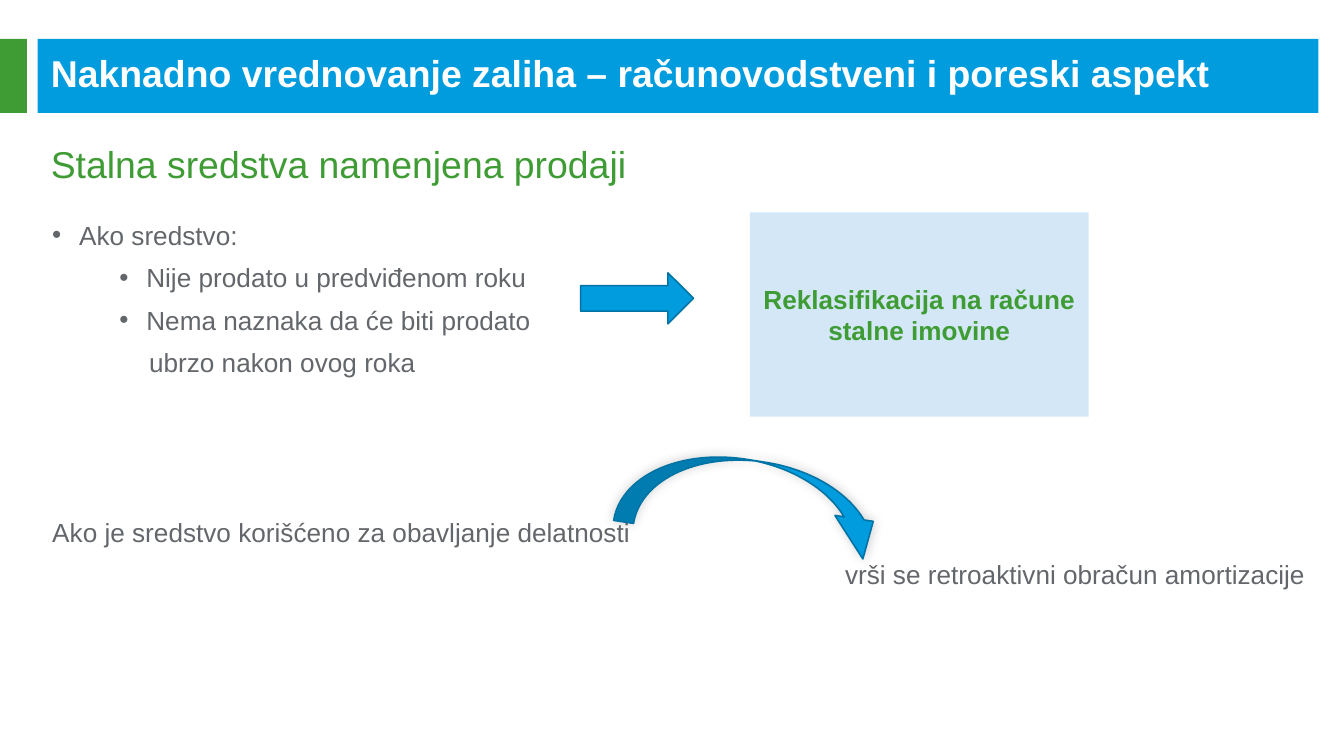
from lxml import etree
from pptx import Presentation
from pptx.dml.color import RGBColor
from pptx.enum.shapes import MSO_SHAPE
from pptx.enum.text import MSO_ANCHOR, PP_ALIGN
from pptx.oxml.ns import qn
from pptx.util import Inches, Pt

RECT = MSO_SHAPE.RECTANGLE
ARROW = MSO_SHAPE.RIGHT_ARROW
CURVE = MSO_SHAPE.CURVED_DOWN_ARROW
TOP, MIDDLE = MSO_ANCHOR.TOP, MSO_ANCHOR.MIDDLE
LEFT, CENTER, RIGHT = PP_ALIGN.LEFT, PP_ALIGN.CENTER, PP_ALIGN.RIGHT

COLORS = {
    "blue": "009CDE",
    "edge": "0073A4",
    "green": "3F9C35",
    "pale": "D4E7F7",
    "gray": "63666A",
    "white": "FFFFFF",
    "black": "000000",
}


def color(name):
    """Return the named colour."""
    return RGBColor.from_string(COLORS[name])


def add_shape(slide, kind, box, fill, edge=None):
    """Add a filled preset shape, with an outline if one is named."""
    shape = slide.shapes.add_shape(kind, *map(Inches, box))
    shape.shadow.inherit = False
    shape.fill.solid()
    shape.fill.fore_color.rgb = color(fill)
    if edge:
        shape.line.color.rgb = color(edge)
        shape.line.width = Pt(0.85)
    else:
        shape.line.fill.background()
    return shape


def add_box(slide, box, anchor=TOP):
    """Add a wrapping text box and return its frame."""
    frame = slide.shapes.add_textbox(*map(Inches, box)).text_frame
    frame.word_wrap = True
    frame.vertical_anchor = anchor
    return frame


def write(frame, text, size=14, tint="gray", bold=False, align=LEFT,
          left=0, hang=0, bullet=False, before=0, after=0):
    """Write one paragraph into a frame."""
    para = frame.paragraphs[0]
    if para.runs:
        para = frame.add_paragraph()
    para.alignment = align
    if before:
        para.space_before = Pt(before)
    para.space_after = Pt(after)
    props = para._p.get_or_add_pPr()
    props.set("marL", str(Inches(left)))
    props.set("indent", str(-Inches(hang)))
    if bullet:
        etree.SubElement(props, qn("a:buFont")).set("typeface", "Arial")
        etree.SubElement(props, qn("a:buChar")).set("char", "•")
    run = para.add_run()
    run.text = text
    font = run.font
    font.name = "Arial"
    font.size = Pt(size)
    font.bold = bold
    font.color.rgb = color(tint)


def add_shadow(shape):
    """Give a shape a soft shadow."""
    effects = shape._element.spPr.find(qn("a:effectLst"))
    outer = etree.SubElement(effects, qn("a:outerShdw"), blurRad=str(Pt(6)),
                             dist="0", dir=str(315 * 60000))
    tone = etree.SubElement(outer, qn("a:srgbClr"), val=COLORS["black"])
    etree.SubElement(tone, qn("a:alpha"), val="20000")


def add_header(slide):
    """Add the title bar and the subtitle."""
    add_shape(slide, RECT, (0.28, 0.29, 9.53, 0.55), "blue")
    add_shape(slide, RECT, (0, 0.29, 0.2, 0.55), "green")
    title = add_box(slide, (0.28, 0.39, 9.45, 0.3), MIDDLE)
    write(title, "Naknadno vrednovanje zaliha – računovodstveni i poreski aspekt",
          size=20, tint="white", bold=True)
    topic = add_box(slide, (0.28, 1, 9.53, 0.53))
    write(topic, "Stalna sredstva namenjena prodaji", size=20, tint="green")


def add_body(slide):
    """Add the conditions and their consequence."""
    body = add_box(slide, (0.29, 1.58, 9.52, 3.21))
    write(body, "Ako sredstvo:", left=0.2, hang=0.2, bullet=True, after=6)
    for text in ("Nije prodato u predviđenom roku",
                 "Nema naznaka da će biti prodato"):
        write(body, text, left=0.7, hang=0.2, bullet=True, after=6)
    write(body, "ubrzo nakon ovog roka", left=0.72, after=6)
    write(body, "Ako je sredstvo korišćeno za obavljanje delatnosti",
          before=68, after=6)
    write(body, "vrši se retroaktivni obračun amortizacije", align=RIGHT, after=6)


def add_result(slide):
    """Add the result panel and the two arrows."""
    add_shape(slide, ARROW, (4.32, 2.03, 0.84, 0.38), "blue", "edge")
    panel = add_shape(slide, RECT, (5.58, 1.58, 2.52, 1.52), "pale")
    frame = panel.text_frame
    frame.word_wrap = True
    frame.vertical_anchor = MIDDLE
    frame.margin_left = frame.margin_right = Inches(0.05)
    write(frame, "Reklasifikacija na račune stalne imovine",
          tint="green", bold=True, align=CENTER)
    curve = add_shape(slide, CURVE, (4.6, 3.43, 2.02, 0.6), "blue", "edge")
    curve.rotation = 8.8
    for i, value in enumerate((0.25, 0.48, 0.48)):
        curve.adjustments[i] = value
    add_shadow(curve)


def main():
    """Build and save the 16:9 slide."""
    deck = Presentation()
    deck.slide_width = Inches(10)
    deck.slide_height = Inches(10) * 9 // 16
    slide = deck.slides.add_slide(deck.slide_layouts[6])
    add_header(slide)
    add_body(slide)
    add_result(slide)
    deck.save("out.pptx")


if __name__ == "__main__":
    main()
